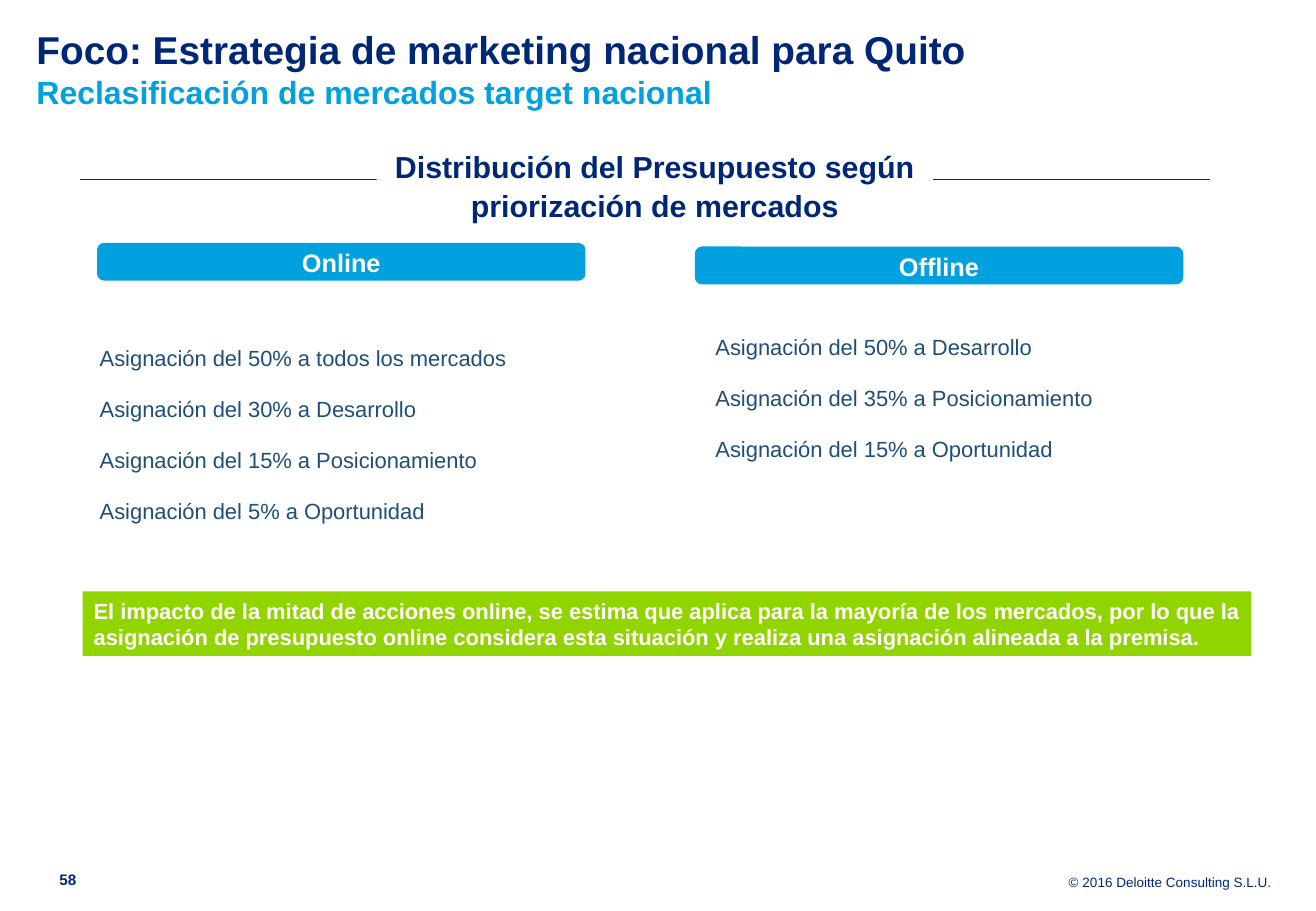
from dataclasses import dataclass

import pptx
import pptx.util
import pptx.dml.color
import pptx.enum.shapes
import pptx.enum.text
from lxml import etree

Pt = pptx.util.Pt
Kind = pptx.enum.shapes.MSO_SHAPE
Align = pptx.enum.text.PP_ALIGN
Anchor = pptx.enum.text.MSO_ANCHOR

FONT = "Arial"
HUES = {
    "navy": "002776",
    "blue": "00A1DE",
    "green": "92D400",
    "steel": "1F4E79",
    "white": "FFFFFF",
}


@dataclass
class Box:
    left: float
    top: float
    width: float
    height: float
    lines: list[str]
    size: float
    hue: str
    bold: bool = False
    fill: str | None = None
    edge: str | None = None
    kind: Kind | None = None
    align: Align = Align.LEFT
    anchor: Anchor = Anchor.TOP
    pad: tuple[float, float] = (0, 0)
    pitch: float | None = None
    before: float = 0
    after: float = 0
    wrap: bool = True


def color(hue: str) -> pptx.dml.color.RGBColor:
    return pptx.dml.color.RGBColor.from_string(HUES[hue])


def add_run(para, text: str, size: float, hue: str, bold: bool) -> None:
    run = para.add_run()
    run.text = text
    run.font.name = FONT
    run.font.size = Pt(size)
    run.font.bold = bold
    run.font.color.rgb = color(hue)


def set_frame(frame, pad: tuple[float, float], anchor: Anchor, wrap: bool) -> None:
    frame.margin_left = frame.margin_right = Pt(pad[0])
    frame.margin_top = frame.margin_bottom = Pt(pad[1])
    frame.vertical_anchor = anchor
    frame.word_wrap = wrap
    frame.auto_size = pptx.enum.text.MSO_AUTO_SIZE.NONE


def draw_box(slide, box: Box) -> None:
    area = [Pt(n) for n in (box.left, box.top, box.width, box.height)]
    if box.kind is None:
        shape = slide.shapes.add_textbox(*area)
    else:
        shape = slide.shapes.add_shape(box.kind, *area)
        shape.shadow.inherit = False
        shape.fill.solid()
        shape.fill.fore_color.rgb = color(box.fill)
        if box.edge:
            shape.line.color.rgb = color(box.edge)
            shape.line.width = Pt(1.5)
        else:
            shape.line.fill.background()
    frame = shape.text_frame
    set_frame(frame, box.pad, box.anchor, box.wrap)
    for i, text in enumerate(box.lines):
        para = frame.add_paragraph() if i else frame.paragraphs[0]
        para.alignment = box.align
        para.space_before = Pt(box.before if i else 0)
        para.space_after = Pt(box.after)
        if box.pitch:
            para.line_spacing = box.pitch
        add_run(para, text, box.size, box.hue, box.bold)


def draw_title(slide) -> None:
    title = slide.shapes.title
    title.left, title.top, title.width, title.height = Pt(21.6), Pt(15.1), Pt(734.4), Pt(66.2)
    set_frame(title.text_frame, (0, 0), Anchor.TOP, True)
    para = title.text_frame.paragraphs[0]
    para.alignment = Align.LEFT
    add_run(para, "Foco: Estrategia de marketing nacional para Quito", 23, "navy", True)
    para.add_line_break()
    add_run(para, "Reclasificación de mercados target nacional", 19, "blue", True)


def draw_rule(slide, left: float, right: float, top: float) -> None:
    rule = slide.shapes.add_connector(
        pptx.enum.shapes.MSO_CONNECTOR.STRAIGHT, Pt(left), Pt(top), Pt(right), Pt(top))
    rule.line.color.rgb = color("navy")
    rule.line.width = Pt(0.75)
    etree.SubElement(rule.line._get_or_add_ln().getparent(), pptx.oxml.ns.qn("a:effectLst"))


def bar(left: float, top: float, text: str) -> Box:
    return Box(left, top, 288, 20.9, [text], 15, "white", True, "blue", "blue",
               Kind.ROUNDED_RECTANGLE, Align.CENTER, Anchor.MIDDLE, (2.9, 0), 1.06)


def shares(left: float, top: float, width: float, height: float, pad: float,
           lines: list[str]) -> Box:
    return Box(left, top, width, height, [f"Asignación del {line}" for line in lines],
               13, "steel", align=Align.JUSTIFY, pad=(pad, 3.6),
               pitch=1.07, before=6, after=7.5)


def main() -> None:
    deck = pptx.Presentation()
    deck.slide_width, deck.slide_height = Pt(780), Pt(540)
    slide = deck.slides.add_slide(deck.slide_layouts[5])
    draw_title(slide)
    draw_rule(slide, 47.5, 717, 106.6)
    boxes = [
        Box(223.2, 86.4, 329.8, 46.1,
            ["Distribución del Presupuesto según priorización de mercados"],
            18, "navy", True, "white", None, Kind.RECTANGLE,
            Align.CENTER, Anchor.MIDDLE, (2.9, 0), 1.06),
        bar(58.3, 144.7, "Online"),
        bar(412.6, 146.9, "Offline"),
        shares(56.2, 199.5, 278, 130, 2.9, [
            "50% a todos los mercados",
            "30% a Desarrollo",
            "15% a Posicionamiento",
            "5% a Oportunidad",
        ]),
        shares(417.6, 193, 312.5, 86.4, 6.5, [
            "50% a Desarrollo",
            "35% a Posicionamiento",
            "15% a Oportunidad",
        ]),
        Box(49, 350.6, 692.6, 38.2,
            ["El impacto de la mitad de acciones online, se estima que aplica para la "
             "mayoría de los mercados, por lo que la asignación de presupuesto online "
             "considera esta situación y realiza una asignación alineada a la premisa."],
            13, "white", True, "green", None, Kind.RECTANGLE, pad=(6.5, 3.6)),
        Box(35.3, 516.2, 24.5, 11.5, ["58"], 9, "navy", True),
        Box(613.4, 519.1, 140.4, 8.6, ["© 2016 Deloitte Consulting S.L.U."], 8, "navy",
            align=Align.RIGHT, anchor=Anchor.BOTTOM),
    ]
    for box in boxes:
        draw_box(slide, box)
    deck.save("out.pptx")


if __name__ == "__main__":
    main()
